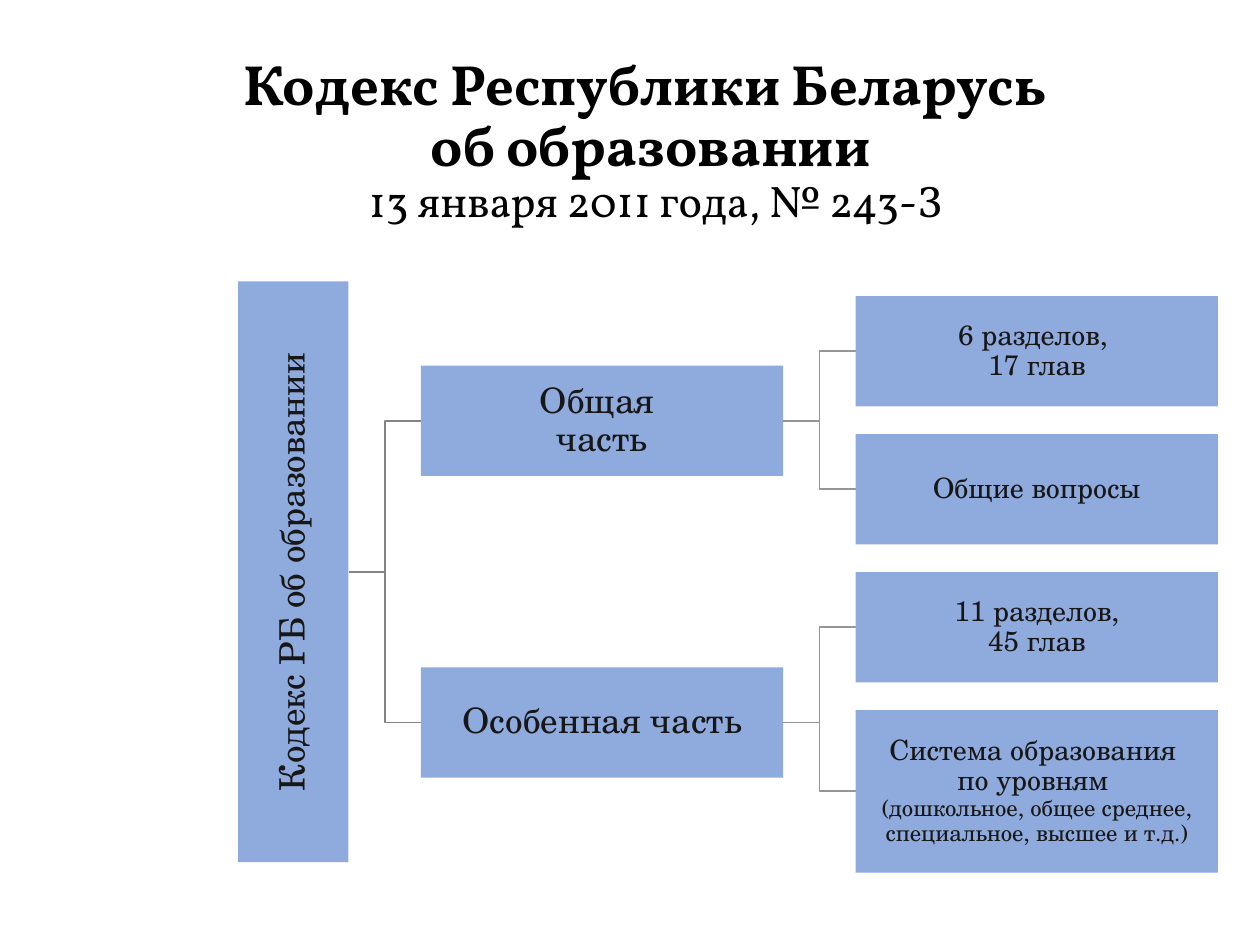
from dataclasses import dataclass

from pptx import Presentation
from pptx.dml.color import RGBColor
from pptx.enum.shapes import MSO_SHAPE
from pptx.enum.text import MSO_ANCHOR, PP_ALIGN
from pptx.util import Inches, Pt


@dataclass(frozen=True)
class Theme:
    background: str = "FFFFFF"
    title_color: str = "000000"
    text_color: str = "181717"
    box_color: str = "8FAADC"
    root_line: str = "848484"
    leaf_line: str = "969696"
    title_font: str = "Vollkorn"
    space_font: str = "Calibri"
    box_font: str = "TeX Gyre Schola"
    title_size: float = 32.4
    subtitle_size: float = 25.2
    part_size: float = 20
    leaf_size: float = 16
    detail_size: float = 13
    line_width: float = 1
    line_spacing: float = 0.9


def apply_format(target, values):
    for name, value in values.items():
        setattr(target, name, value)


class DiagramSlide:
    columns = 100
    rows = 75

    def __init__(self, presentation, theme):
        self.theme = theme
        self.column = presentation.slide_width / self.columns
        self.row = presentation.slide_height / self.rows
        self.slide = presentation.slides.add_slide(presentation.slide_layouts[6])
        fill = self.slide.background.fill
        fill.solid()
        fill.fore_color.rgb = RGBColor.from_string(theme.background)

    def place(self, column, row):
        return round(column * self.column), round(row * self.row)

    def fill_text(self, shape, runs, color, margin):
        frame = shape.text_frame
        margins = {f"margin_{side}": Inches(margin) for side in ("left", "right", "top", "bottom")}
        apply_format(frame, {"word_wrap": True, "vertical_anchor": MSO_ANCHOR.MIDDLE, **margins})
        paragraph = frame.paragraphs[0]
        apply_format(paragraph, {"alignment": PP_ALIGN.CENTER, "line_spacing": self.theme.line_spacing})
        for text, font_name, size, bold in runs:
            for index, line in enumerate(text.split("\n")):
                if index:
                    paragraph.add_line_break()
                if line:
                    run = paragraph.add_run()
                    run.text = line
                    apply_format(run.font, {"name": font_name, "size": Pt(size), "bold": bold})
                    run.font.color.rgb = RGBColor.from_string(color)

    def title(self, left, top, width, height, runs):
        shape = self.slide.shapes.add_textbox(*self.place(left, top), *self.place(width, height))
        self.fill_text(shape, runs, self.theme.title_color, 0.05)

    def box(self, center_x, center_y, width, height, parts, rotation=0):
        corner = self.place(center_x - width / 2, center_y - height / 2)
        shape = self.slide.shapes.add_shape(MSO_SHAPE.RECTANGLE, *corner, *self.place(width, height))
        shape.rotation = rotation
        shape.shadow.inherit = False
        shape.fill.solid()
        shape.fill.fore_color.rgb = RGBColor.from_string(self.theme.box_color)
        shape.line.fill.background()
        runs = [(text, self.theme.box_font, size, False) for text, size in parts]
        self.fill_text(shape, runs, self.theme.text_color, 0.01)

    def branch(self, start, end, color):
        middle = (start[0] + end[0]) / 2
        builder = self.slide.shapes.build_freeform(*self.place(*start))
        corners = [(middle, start[1]), (middle, end[1]), end]
        builder.add_line_segments([self.place(*corner) for corner in corners], close=False)
        shape = builder.convert_to_shape()
        shape.shadow.inherit = False
        shape.fill.background()
        shape.line.color.rgb = RGBColor.from_string(color)
        shape.line.width = Pt(self.theme.line_width)


def main():
    presentation = Presentation()
    apply_format(presentation, {"slide_width": Inches(10), "slide_height": Inches(7.5)})
    theme = Theme()
    diagram = DiagramSlide(presentation, theme)

    diagram.title(6.9, 4, 89.5, 14.5, [
        ("Кодекс Республики Беларусь \nоб образовании\n", theme.title_font, theme.title_size, True),
        (" ", theme.space_font, theme.subtitle_size, False),
        ("13 января 2011 года, № 243-З", theme.title_font, theme.subtitle_size, False),
    ])

    box_width, box_height, root_length, gap = 28.75, 8.76, 46.1, 5.75
    root_left = 18.9
    part_left = root_left + box_height + gap
    leaf_left = part_left + box_width + gap
    first_leaf, leaf_step = 23.5, 10.95

    part_size, leaf_size = theme.part_size, theme.leaf_size
    parts = [
        ("Общая \nчасть", 33.4, [
            ([("6 разделов, \n17 глав", leaf_size)], box_height),
            ([("Общие вопросы", leaf_size)], box_height),
        ]),
        ("Особенная часть", 57.35, [
            ([("11 разделов,\n45 глав", leaf_size)], box_height),
            ([("Система образования \nпо уровням \n", leaf_size),
              ("(дошкольное, общее среднее, специальное, высшее и т.д.)", theme.detail_size)], 12.9),
        ]),
    ]
    root_center = sum(center for _, center, _ in parts) / len(parts)
    root_right = root_left + box_height

    diagram.box(root_left + box_height / 2, root_center, root_length, box_height,
                [("Кодекс РБ об образовании", part_size)], rotation=270)
    leaf_top = first_leaf
    for text, center, leaves in parts:
        diagram.branch((root_right, root_center), (part_left, center), theme.root_line)
        diagram.box(part_left + box_width / 2, center, box_width, box_height, [(text, part_size)])
        for leaf_text, height in leaves:
            leaf_center = leaf_top + height / 2
            diagram.branch((part_left + box_width, center), (leaf_left, leaf_center), theme.leaf_line)
            diagram.box(leaf_left + box_width / 2, leaf_center, box_width, height, leaf_text)
            leaf_top += leaf_step

    presentation.save("out.pptx")


if __name__ == "__main__":
    main()
